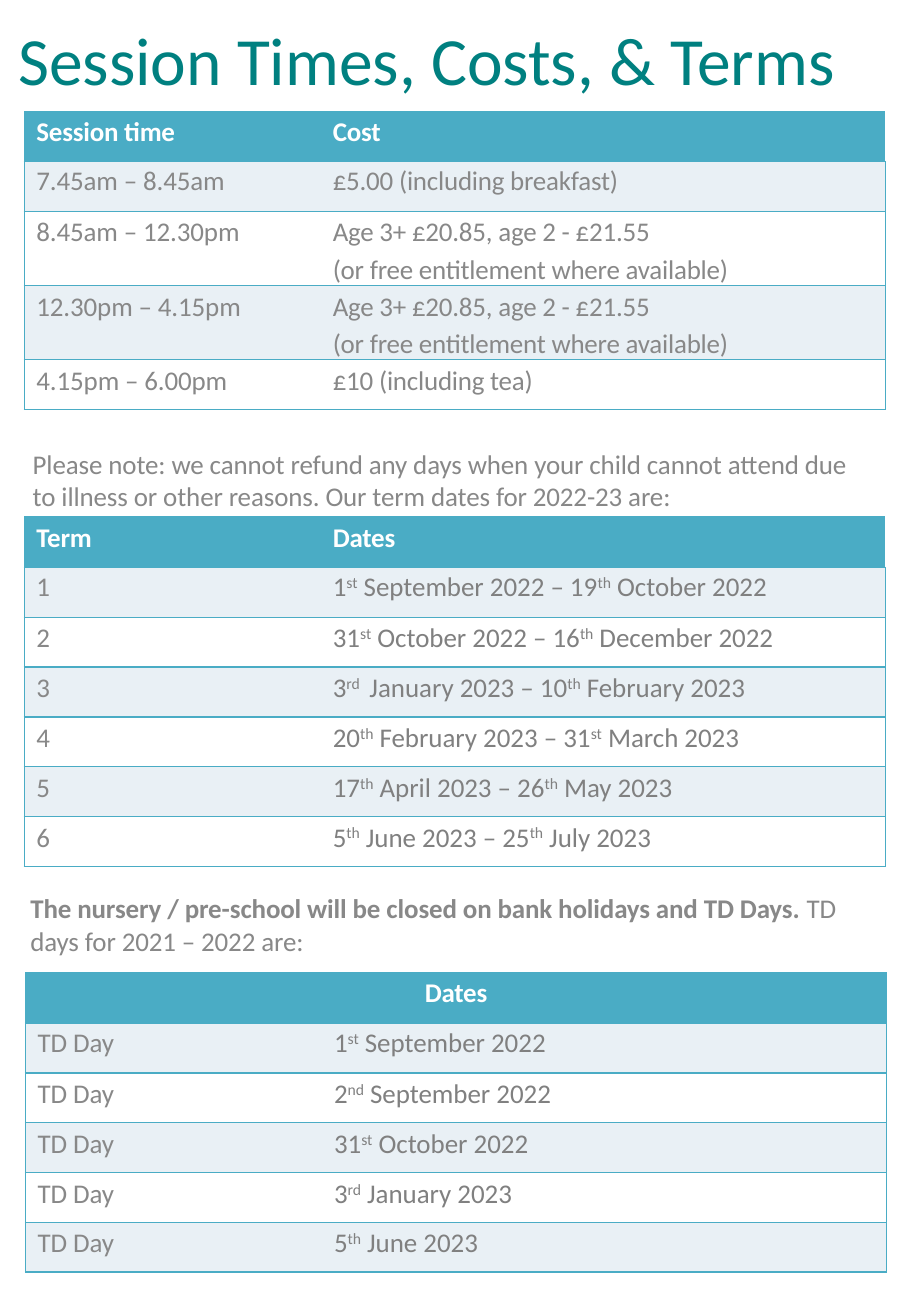
"""Builds the nursery page of session times, costs and term dates."""
from dataclasses import dataclass

from lxml import etree
from pptx import Presentation
from pptx import util as u
from pptx.dml import color
from pptx.enum import text as t
from pptx.oxml import ns

COLORS = {"title": "008080", "accent": "4AACC5", "band": "E9F0F5",
          "header": "FFFFFF", "body": "888888", "date": "808080"}
NO_STYLE = "{2D5ABB26-0587-4C30-8999-92F81FD0307C}"
DETAIL_OFFSET = 2.54
LABEL_INDENT = 0.1


@dataclass(frozen=True)
class Note:
    left: float
    top: float
    width: float
    height: float
    text: str
    size: float = 16
    ink: str = "body"
    spacing: float = -0.05


@dataclass(frozen=True)
class Schedule:
    left: float
    top: float
    label_width: float
    header: tuple[str, ...]
    rows: tuple[tuple[str, str], ...]
    detail_ink: str = "date"
    detail_spacing: float = 0
    width: float = 7.09


FREE_SESSION = "Age 3+ £20.85, age 2 - £21.55\n(or free entitlement where available)"

NOTES = (
    Note(0.14, 0.14, 6.75, 0.69, "Session Times, Costs, & Terms", 40, "title", 0),
    Note(0.26, 3.67, 6.8, 0.56,
         "Please note: we cannot refund any days when your child cannot attend due "
         "to illness or other reasons. Our term dates for 2022-23 are:"),
    Note(0.24, 7.33, 6.74, 0.56,
         "*The nursery / pre-school will be closed on bank holidays and TD Days. *"
         "TD days for 2021 – 2022 are:"),
)

SCHEDULES = (
    Schedule(0.2, 0.91, 2.17, ("Session time", "Cost"), (
        ("7.45am – 8.45am", "£5.00 (including breakfast)"),
        ("8.45am – 12.30pm", FREE_SESSION),
        ("12.30pm – 4.15pm", FREE_SESSION),
        ("4.15pm – 6.00pm", "£10 (including tea)"),
    ), "body", -0.1),
    Schedule(0.2, 4.25, 1.55, ("Term", "Dates"), (
        ("1", "1^st^ September 2022 – 19^th^ October 2022"),
        ("2", "31^st^ October 2022 – 16^th^ December 2022"),
        ("3", "3^rd ^ January 2023 – 10^th^ February 2023"),
        ("4", "20^th^ February 2023 – 31^st^ March 2023"),
        ("5", "17^th^ April 2023 – 26^th^ May 2023"),
        ("6", "5^th^ June 2023 – 25^th^ July 2023"),
    )),
    Schedule(0.21, 8, 1.9, ("Dates",), (
        ("TD Day", "1^st^ September 2022"),
        ("TD Day", "2^nd^ September 2022"),
        ("TD Day", "31^st^ October 2022"),
        ("TD Day", "3^rd^ January 2023"),
        ("TD Day", "5^th^ June 2023"),
    )),
)


def write(frame, text: str, *, size: float = 16, ink: str = "body",
          bold: bool = False, spacing: float = 0, before: float = 0.9,
          indent: float = 0.01, align=t.PP_ALIGN.LEFT) -> None:
    """Writes lines of text, with *bold* and ^raised^ spans."""
    for number, line in enumerate(text.split("\n")):
        paragraph = frame.add_paragraph() if number else frame.paragraphs[0]
        paragraph.alignment = align
        paragraph.space_before = u.Pt(before)
        properties = paragraph._p.get_or_add_pPr()
        properties.set("marL", str(u.Inches(indent)))
        properties.set("indent", "0")
        for bold_index, span in enumerate(line.split("*")):
            for raised_index, part in enumerate(span.split("^")):
                if not part:
                    continue
                run = paragraph.add_run()
                run.text = part
                run.font.name = "Calibri"
                run.font.size = u.Pt(size)
                run.font.bold = bold or bold_index % 2 == 1
                run.font.color.rgb = color.RGBColor.from_string(COLORS[ink])
                run_properties = run._r.get_or_add_rPr()
                run_properties.set("spc", str(round(spacing * 100)))
                if raised_index % 2:
                    run_properties.set("baseline", "30000")


def add_note(slide, note: Note) -> None:
    """Adds one free-standing piece of text."""
    box = slide.shapes.add_textbox(u.Inches(note.left), u.Inches(note.top),
                                   u.Inches(note.width), u.Inches(note.height))
    frame = box.text_frame
    frame.word_wrap = True
    frame.auto_size = t.MSO_AUTO_SIZE.SHAPE_TO_FIT_TEXT
    frame.margin_left = frame.margin_right = frame.margin_bottom = 0
    frame.margin_top = u.Inches(0.01)
    write(frame, note.text, size=note.size, ink=note.ink, spacing=note.spacing)


def style_cell(cell, fill: str | None, sides: str, margin_top: float) -> None:
    """Sets the margins, fill and bordered sides (of L, R, T, B) of a cell."""
    cell.margin_left = cell.margin_right = cell.margin_bottom = 0
    cell.margin_top = u.Inches(margin_top)
    if fill:
        cell.fill.solid()
        cell.fill.fore_color.rgb = color.RGBColor.from_string(COLORS[fill])
    else:
        cell.fill.background()
    properties = cell._tc.get_or_add_tcPr()
    for position, side in enumerate(sides):
        line = etree.Element(ns.qn(f"a:ln{side}"), w=str(u.Pt(1)))
        solid = etree.SubElement(line, ns.qn("a:solidFill"))
        etree.SubElement(solid, ns.qn("a:srgbClr"), val=COLORS["accent"])
        properties.insert(position, line)


def add_schedule(slide, schedule: Schedule) -> None:
    """Adds a two-column table with a header and banded rows."""
    heights = [0.42] + [0.61 if "\n" in detail else 0.41
                        for _, detail in schedule.rows]
    holder = slide.shapes.add_table(
        len(heights), 2, u.Inches(schedule.left), u.Inches(schedule.top),
        u.Inches(schedule.width), u.Inches(sum(heights)))
    table = holder.table
    table.first_row = table.horz_banding = False
    table._tbl.tblPr.find(ns.qn("a:tableStyleId")).text = NO_STYLE
    table.columns[0].width = u.Inches(schedule.label_width)
    table.columns[1].width = u.Inches(schedule.width - schedule.label_width)
    for row, height in zip(table.rows, heights):
        row.height = u.Inches(height)

    indents = (LABEL_INDENT, DETAIL_OFFSET - schedule.label_width)
    for column in range(2):
        style_cell(table.cell(0, column), "accent", "", 0.04)
    merged = len(schedule.header) == 1
    if merged:
        table.cell(0, 0).merge(table.cell(0, 1))
    for column, heading in enumerate(schedule.header):
        write(table.cell(0, column).text_frame, heading, ink="header", bold=True,
              spacing=-0.1, before=3.1, indent=0 if merged else indents[column],
              align=t.PP_ALIGN.CENTER if merged else t.PP_ALIGN.LEFT)

    inks = ("body", schedule.detail_ink)
    spacings = (-0.05, schedule.detail_spacing)
    for index, entry in enumerate(schedule.rows, start=1):
        for column, content in enumerate(entry):
            cell = table.cell(index, column)
            style_cell(cell, "band" if index % 2 else None,
                       "LR"[column] + "TB", 0.03 if index == 1 else 0.04)
            write(cell.text_frame, content, ink=inks[column],
                  spacing=spacings[column], indent=indents[column],
                  before=2.1 if index == 1 else 2.6)


def main() -> None:
    """Builds and saves the page."""
    deck = Presentation()
    deck.slide_width, deck.slide_height = u.Inches(7.5), u.Inches(10.83)
    slide = deck.slides.add_slide(deck.slide_layouts[6])
    for note in NOTES:
        add_note(slide, note)
    for schedule in SCHEDULES:
        add_schedule(slide, schedule)
    deck.save("out.pptx")


if __name__ == "__main__":
    main()
